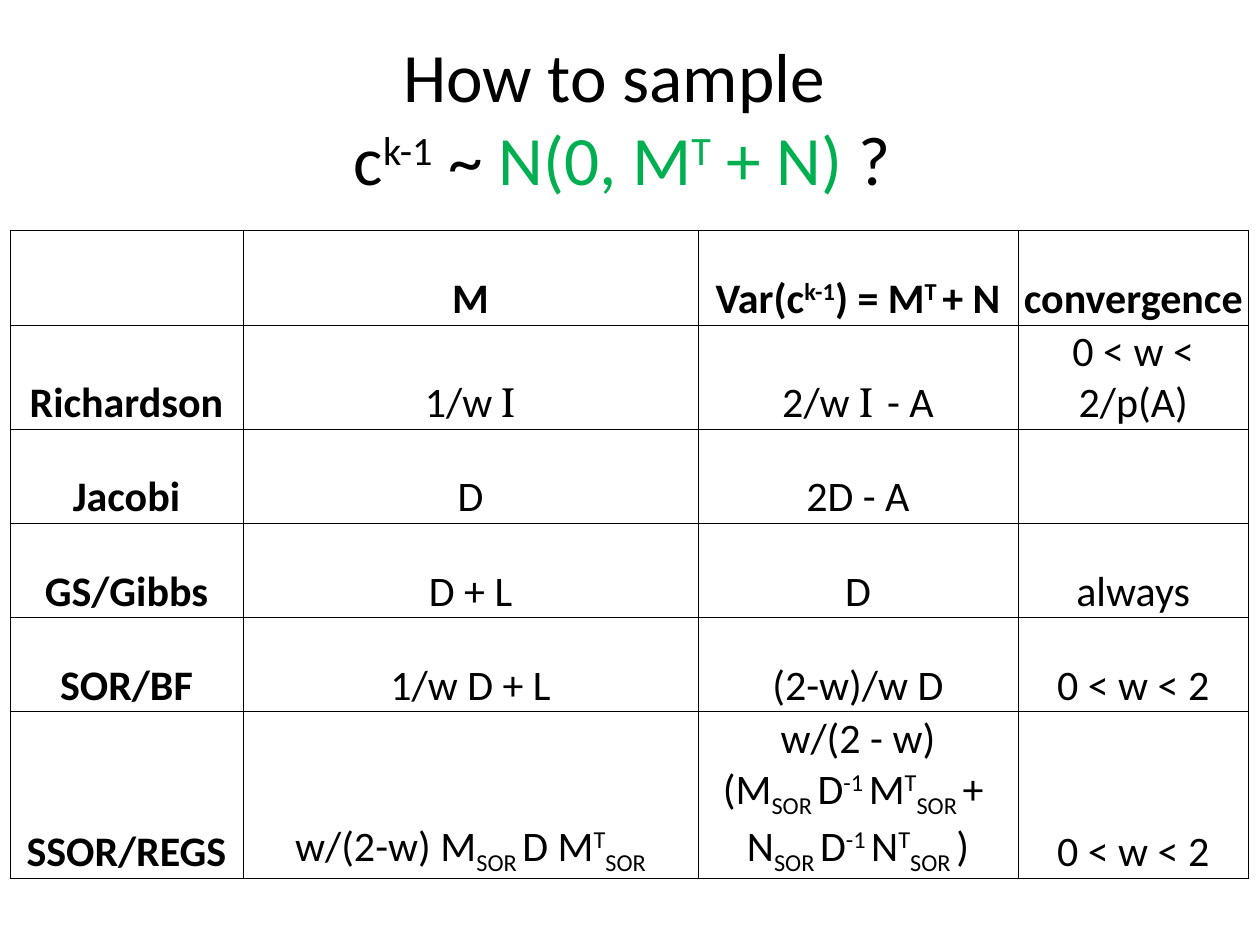
from lxml.etree import SubElement
from pptx import Presentation
from pptx.dml.color import RGBColor
from pptx.enum.text import MSO_ANCHOR, PP_ALIGN
from pptx.oxml.ns import qn
from pptx.util import Cm, Pt

BLACK = RGBColor(0x00, 0x00, 0x00)
GREEN = RGBColor(0x00, 0xB0, 0x50)
FONT, SERIF = "Calibri", "TeX Gyre Bonum"

# Run formats
SUP, SUB = {"baseline": 30}, {"baseline": -25}
GREEN_RUN = {"color": GREEN}
SERIF_RUN = {"name": SERIF}

# Content: a paragraph is a list of (text, format) runs
TITLE = [
    ("How to sample  \vc", {}), ("k-1", SUP), (" ~ ", {}), ("N(0, M", GREEN_RUN),
    ("T", {**SUP, **GREEN_RUN}), (" + N) ", GREEN_RUN), ("? ", {}),
]
VARIANCE = [("Var(c", {}), ("k-1", SUP), (") = M", {}), ("T ", SUP), ("+ N", {})]
SSOR_M = [("w/(2-w) M", {}), ("SOR ", SUB), ("D M", {}), ("T", SUP), ("SOR", SUB)]


def product(before, letter, after):
    """Runs of one term: X_SOR D^-1 X^T_SOR."""
    return [(before + letter, {}), ("SOR ", SUB), ("D", {}), ("-1 ", SUP),
            (letter, {}), ("T", SUP), ("SOR ", SUB), (after, {})]


# A cell is plain text or a list of paragraphs
ROWS = [
    ["", "M", [VARIANCE], "convergence"],
    ["Richardson", [[("1/w ", {}), ("I", SERIF_RUN)]],
     [[("2/w ", {}), ("I ", SERIF_RUN), ("- A", {})]], "0 < w < 2/p(A)"],
    ["Jacobi", "D", "2D - A", ""],
    ["GS/Gibbs", "D + L", "D", "always"],
    ["SOR/BF", "1/w D + L", "(2-w)/w D", "0 < w < 2"],
    ["SSOR/REGS", [SSOR_M],
     [[("w/(2 - w)", {})], product("(", "M", "+ "), product("", "N", ")")],
     "0 < w < 2"],
]
COL_WIDTHS = [4.7, 9.17, 6.45, 4.65]
ROW_HEIGHT = 1.9


def add_runs(p, runs, **base):
    p.alignment = PP_ALIGN.CENTER
    for text, extra in runs:
        fmt = {"name": FONT, "color": BLACK, **base, **extra}
        baseline = fmt.pop("baseline", 0)
        color = fmt.pop("color")
        for i, line in enumerate(text.split("\v")):
            if i:
                p.add_line_break()
            r = p.add_run()
            r.text = line
            for key, value in fmt.items():
                setattr(r.font, key, value)
            r.font.color.rgb = color
            if baseline:
                r.font._element.set("baseline", str(baseline * 1000))


def add_borders(cell):
    tcPr = cell._tc.get_or_add_tcPr()
    for i, side in enumerate(("lnL", "lnR", "lnT", "lnB")):
        ln = tcPr.makeelement(qn("a:" + side), {"w": str(Pt(0.5))})
        fill = SubElement(ln, qn("a:solidFill"))
        SubElement(fill, qn("a:srgbClr"), val=str(BLACK))
        tcPr.insert(i, ln)


prs = Presentation()
prs.slide_width, prs.slide_height = Cm(25.4), Cm(19.05)
s = prs.slides.add_slide(prs.slide_layouts[5])

# Title
title = s.shapes.title
title.left, title.top, title.width, title.height = Cm(1.27), Cm(0.76), Cm(22.86), Cm(3.18)
title.text_frame.vertical_anchor = MSO_ANCHOR.MIDDLE
add_runs(title.text_frame.paragraphs[0], TITLE, size=Pt(39.6))

# Table of splittings
table = s.shapes.add_table(
    len(ROWS), len(COL_WIDTHS), Cm(0.2), Cm(4.65),
    Cm(sum(COL_WIDTHS)), Cm(ROW_HEIGHT * len(ROWS))).table
table.first_row = table.horz_banding = False
for column, width in zip(table.columns, COL_WIDTHS):
    column.width = Cm(width)

CELL_FORMAT = {"vertical_anchor": MSO_ANCHOR.BOTTOM, "margin_left": Cm(0.03),
               "margin_right": Cm(0.03), "margin_top": Cm(0.03), "margin_bottom": 0}
for i, row in enumerate(ROWS):
    table.rows[i].height = Cm(ROW_HEIGHT)
    for j, content in enumerate(row):
        cell = table.cell(i, j)
        for key, value in CELL_FORMAT.items():
            setattr(cell, key, value)
        cell.fill.background()
        add_borders(cell)
        if not content:
            continue
        paragraphs = [[(content, {})]] if isinstance(content, str) else content
        tf = cell.text_frame
        for k, runs in enumerate(paragraphs):
            p = tf.add_paragraph() if k else tf.paragraphs[0]
            add_runs(p, runs, size=Pt(24), bold=i == 0 or j == 0)

prs.save("out.pptx")
